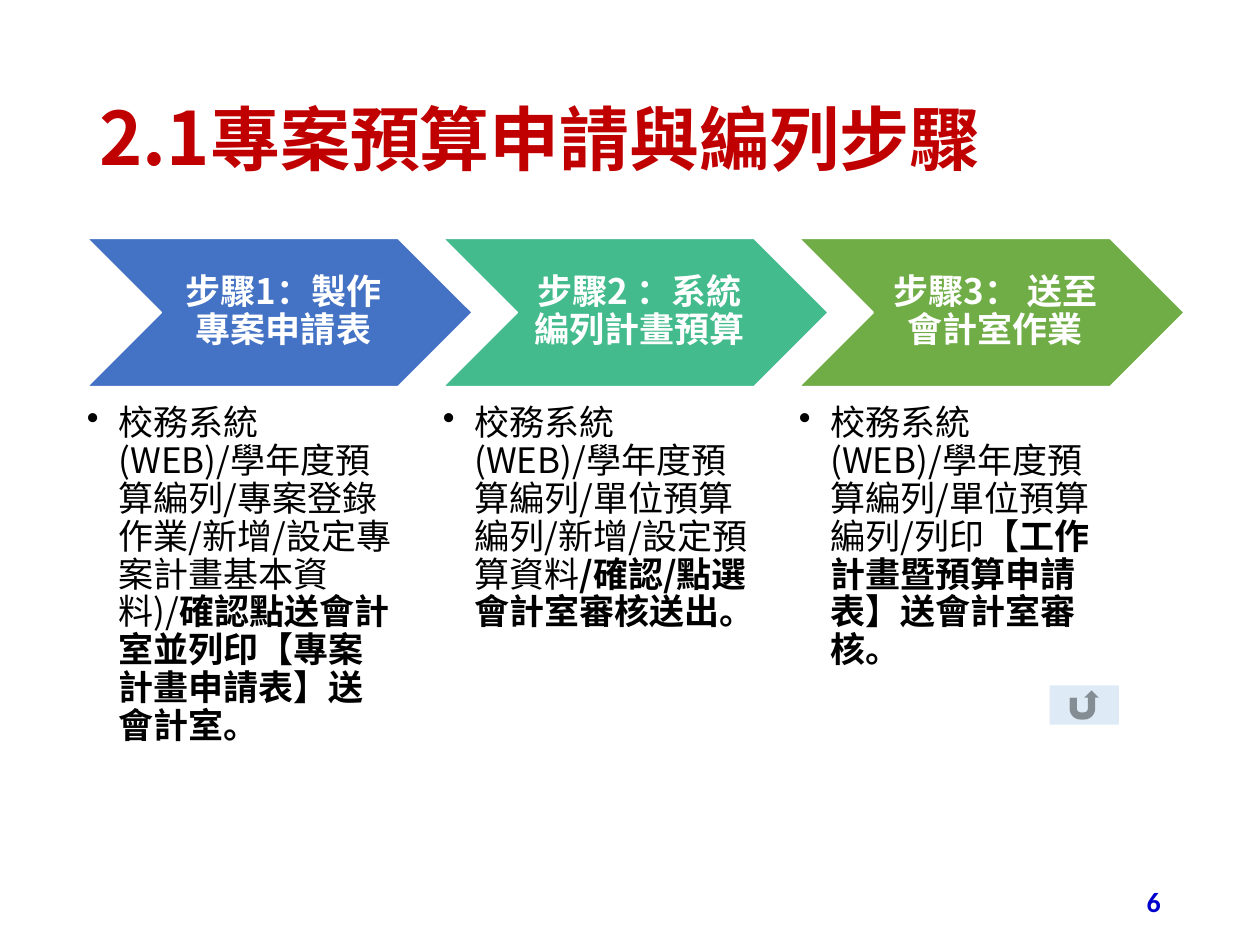
"""Build the slide on the three steps of a project budget application."""
import pptx
import pptx.dml.color
import pptx.enum.shapes
import pptx.enum.text
import pptx.oxml
import pptx.oxml.ns
import pptx.util

Inches = pptx.util.Inches
Pt = pptx.util.Pt
RGBColor = pptx.dml.color.RGBColor
SHAPE = pptx.enum.shapes.MSO_SHAPE
ALIGN = pptx.enum.text.PP_ALIGN
ANCHOR = pptx.enum.text.MSO_ANCHOR

RED = RGBColor(0xC0, 0x00, 0x00)
BLUE = RGBColor(0x44, 0x72, 0xC4)
TEAL = RGBColor(0x43, 0xBB, 0x8D)
GREEN = RGBColor(0x70, 0xAD, 0x47)
WHITE = RGBColor(0xFF, 0xFF, 0xFF)
BLACK = RGBColor(0x00, 0x00, 0x00)
NUMBER_BLUE = RGBColor(0x00, 0x00, 0xCC)
PALE_BLUE = RGBColor(0xDE, 0xEB, 0xF7)
CJK = "Noto Sans CJK SC"

TITLE = [("2.1", 42), ("專案預算申請與編列步驟", 40)]
STEPS = [
    (BLUE, "步驟1：製作專案申請表",
     "校務系統(WEB)/學年度預算編列/專案登錄作業/新增/設定專案計畫基本資料)/",
     "確認點送會計室並列印【專案計畫申請表】送會計室。"),
    (TEAL, "步驟2 ：系統編列計畫預算",
     "校務系統(WEB)/學年度預算編列/單位預算編列/新增/設定預算資料",
     "/確認/點選會計室審核送出。"),
    (GREEN, "步驟3： 送至會計室作業",
     "校務系統(WEB)/學年度預算編列/單位預算編列/列印",
     "【工作計畫暨預算申請表】送會計室審核。"),
]
LEFT, PITCH = 0.69, 2.825
CHEVRON_TOP, CHEVRON_W, CHEVRON_H = 1.89, 3.06, 1.18
LABEL_INSETS = (0.09, 0.03, 0.03, 0.03)


def apply(obj, **values):
    for name, value in values.items():
        setattr(obj, name, value)


def add_run(p, text, size, color, bold=False, name=CJK):
    r = p.add_run()
    r.text = text
    apply(r.font, size=Pt(size), bold=bold, name=name)
    r.font.color.rgb = color
    ea = pptx.oxml.parse_xml(f'<a:ea {pptx.oxml.ns.nsdecls("a")} typeface="{name}"/>')
    r.font._element.append(ea)


def add_text(s, box, insets=(0.1, 0.05, 0.1, 0.05), anchor=ANCHOR.TOP):
    tf = s.shapes.add_textbox(*map(Inches, box)).text_frame
    left, top, right, bottom = map(Inches, insets)
    apply(tf, word_wrap=True, vertical_anchor=anchor, margin_left=left,
          margin_top=top, margin_right=right, margin_bottom=bottom)
    return tf.paragraphs[0]


def add_preset(s, kind, box, fill):
    sp = s.shapes.add_shape(kind, *map(Inches, box))
    sp.shadow.inherit = False
    sp.fill.solid()
    sp.fill.fore_color.rgb = fill
    return sp


def add_bullet(p):
    pPr = p._p.get_or_add_pPr()
    pPr.set("marL", str(Inches(0.25)))
    pPr.set("indent", str(-Inches(0.25)))
    pPr.append(pptx.oxml.parse_xml(f'<a:buChar {pptx.oxml.ns.nsdecls("a")} char="•"/>'))


def add_step(s, x, color, label, path_text, action):
    sp = add_preset(s, SHAPE.CHEVRON, (x, CHEVRON_TOP, CHEVRON_W, CHEVRON_H), color)
    sp.line.color.rgb = WHITE
    sp.line.width = Pt(1)

    box = (x + CHEVRON_H / 2, CHEVRON_TOP, CHEVRON_W - CHEVRON_H, CHEVRON_H)
    p = add_text(s, box, LABEL_INSETS, ANCHOR.MIDDLE)
    apply(p, alignment=ALIGN.CENTER, line_spacing=0.9)
    add_run(p, label, 20, WHITE, True)

    p = add_text(s, (x, 3.22, 2.45, 3.54), (0, 0, 0, 0))
    add_bullet(p)
    apply(p, level=1, line_spacing=0.9)
    add_run(p, path_text, 20, BLACK)
    add_run(p, action, 20, BLACK, True)


def main():
    prs = pptx.Presentation()
    apply(prs, slide_width=Inches(10), slide_height=Inches(7.5))
    s = prs.slides.add_slide(prs.slide_layouts[5])

    title = s.shapes.title
    apply(title, left=Inches(0.69), top=Inches(0.4), width=Inches(8.62), height=Inches(1.45))
    apply(title.text_frame, word_wrap=True, vertical_anchor=ANCHOR.MIDDLE)
    p = title.text_frame.paragraphs[0]
    apply(p, alignment=ALIGN.LEFT, line_spacing=0.9)
    for text, size in TITLE:
        add_run(p, text, size, RED, True)

    for i, step in enumerate(STEPS):
        add_step(s, LEFT + i * PITCH, *step)

    p = add_text(s, (7.06, 6.95, 2.25, 0.4), anchor=ANCHOR.MIDDLE)
    p.alignment = ALIGN.RIGHT
    add_run(p, "6", 16, NUMBER_BLUE, True, "Calibri")

    button = add_preset(s, SHAPE.ACTION_BUTTON_RETURN, (8.33, 5.44, 0.55, 0.31), PALE_BLUE)
    button.line.fill.background()
    prs.save("out.pptx")


if __name__ == "__main__":
    main()
